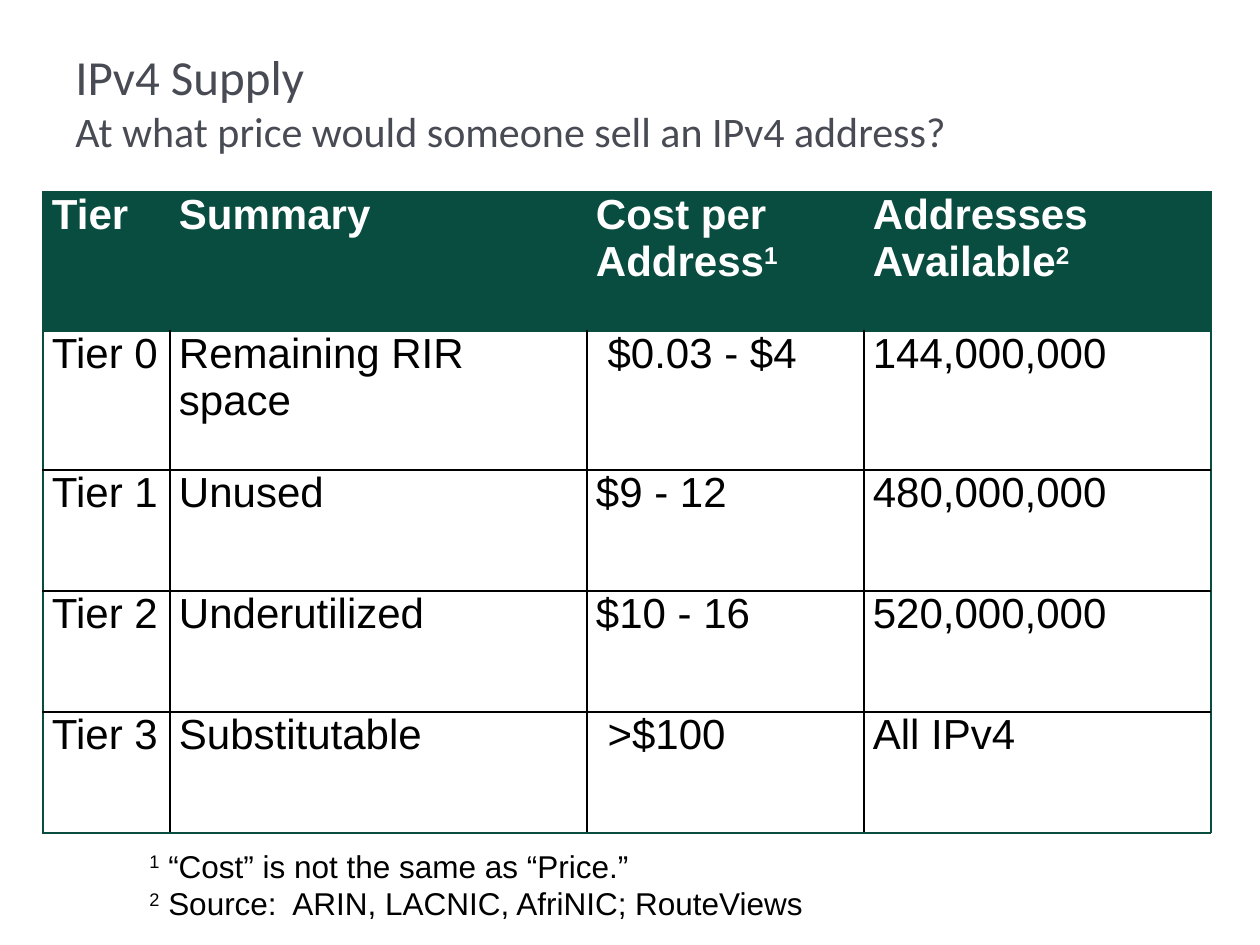
from typing import NamedTuple

from lxml import etree
from pptx import Presentation
from pptx.dml.color import RGBColor
from pptx.enum.text import MSO_ANCHOR
from pptx.oxml.ns import qn
from pptx.util import Emu, Pt

TOP, MIDDLE = MSO_ANCHOR.TOP, MSO_ANCHOR.MIDDLE
EMU_PER_PX = 914400 / 126
COLORS = {"title": "484B54", "green": "094D40", "white": "FFFFFF", "black": "000000"}
SUPERSCRIPT = "30000"


class Style(NamedTuple):
    font: str
    size: int
    color: str
    bold: bool = False


class Box(NamedTuple):
    left: int
    top: int
    width: int
    height: int


class Marked(NamedTuple):
    """Text with an optional footnote mark before or after it."""
    text: str
    before: str = ""
    after: str = ""


class Border(NamedTuple):
    color: str
    points: float


HEADING = Style("Calibri", 28, "title")
QUESTION = Style("Calibri", 24, "title")
HEADER = Style("Arial", 24, "white", True)
BODY = Style("Arial", 24, "black")
NOTE = Style("Arial", 18, "black")
OUTER = Border("green", 0.75)
INNER = Border("black", 1)

COLUMN_WIDTHS = (127, 417, 277, 347)
ROW_HEIGHTS = (139, 139, 121, 121, 121)
TIERS = (
    (Marked("Tier"), Marked("Summary"), Marked("Cost per Address", after="1"),
     Marked("Addresses Available", after="2")),
    (Marked("Tier 0"), Marked("Remaining RIR space"), Marked(" $0.03 - $4"),
     Marked("144,000,000")),
    (Marked("Tier 1"), Marked("Unused"), Marked("$9 - 12"), Marked("480,000,000")),
    (Marked("Tier 2"), Marked("Underutilized"), Marked("$10 - 16"), Marked("520,000,000")),
    (Marked("Tier 3"), Marked("Substitutable"), Marked(" >$100"), Marked("All IPv4")),
)
FOOTNOTES = (
    Marked(" “Cost” is not the same as “Price.”", before="1"),
    Marked(" Source:  ARIN, LACNIC, AfriNIC; RouteViews", before="2"),
)


def px(length: int) -> Emu:
    return Emu(round(length * EMU_PER_PX))


def rgb(name: str) -> RGBColor:
    return RGBColor.from_string(COLORS[name])


def add_run(paragraph, text: str, style: Style, raised: bool = False) -> None:
    run = paragraph.add_run()
    run.text = text
    run.font.name, run.font.size, run.font.bold = style.font, Pt(style.size), style.bold
    run.font.color.rgb = rgb(style.color)
    if raised:
        run.font._element.set("baseline", SUPERSCRIPT)


def add_marked(paragraph, marked: Marked, style: Style) -> None:
    if marked.before:
        add_run(paragraph, marked.before, style, raised=True)
    add_run(paragraph, marked.text, style)
    if marked.after:
        add_run(paragraph, marked.after, style, raised=True)


def add_text_frame(slide, box: Box, anchor):
    frame = slide.shapes.add_textbox(*map(px, box)).text_frame
    frame.word_wrap = True
    frame.vertical_anchor = anchor
    return frame


def cell_borders(row: int, column: int) -> dict[str, Border | None]:
    """Green around the table and under the header, black between body cells."""
    last_row, last_column = len(ROW_HEIGHTS) - 1, len(COLUMN_WIDTHS) - 1
    between_columns = INNER if row else None
    return {
        "a:lnL": between_columns if column else OUTER,
        "a:lnR": between_columns if column < last_column else OUTER,
        "a:lnT": OUTER if row < 2 else INNER,
        "a:lnB": OUTER if row in (0, last_row) else INNER,
    }


def draw_borders(cell, borders: dict[str, Border | None]) -> None:
    properties = cell._tc.get_or_add_tcPr()
    for position, (tag, border) in enumerate(borders.items()):
        line = etree.Element(qn(tag))
        if border:
            line.set("w", str(Pt(border.points)))
            fill = etree.SubElement(line, qn("a:solidFill"))
            etree.SubElement(fill, qn("a:srgbClr"), val=COLORS[border.color])
        else:
            etree.SubElement(line, qn("a:noFill"))
        properties.insert(position, line)


def add_title(slide) -> None:
    paragraph = add_text_frame(slide, Box(63, 40, 1041, 157), TOP).paragraphs[0]
    add_run(paragraph, "IPv4 Supply", HEADING)
    paragraph.add_line_break()
    add_run(paragraph, "At what price would someone sell an IPv4 address?", QUESTION)


def add_tier_table(slide) -> None:
    box = Box(43, 192, sum(COLUMN_WIDTHS), sum(ROW_HEIGHTS))
    table = slide.shapes.add_table(len(TIERS), len(COLUMN_WIDTHS), *map(px, box)).table
    table.horz_banding = False
    for column, width in zip(table.columns, COLUMN_WIDTHS):
        column.width = px(width)
    for row, height in zip(table.rows, ROW_HEIGHTS):
        row.height = px(height)
    for row, tier in enumerate(TIERS):
        for column, marked in enumerate(tier):
            cell = table.cell(row, column)
            cell.margin_left = cell.margin_right = px(9)
            cell.margin_top = cell.margin_bottom = 0
            cell.fill.solid()
            cell.fill.fore_color.rgb = rgb("white" if row else "green")
            add_marked(cell.text_frame.paragraphs[0], marked, BODY if row else HEADER)
            draw_borders(cell, cell_borders(row, column))


def add_footnotes(slide) -> None:
    frame = add_text_frame(slide, Box(137, 840, 920, 89), MIDDLE)
    for index, footnote in enumerate(FOOTNOTES):
        paragraph = frame.add_paragraph() if index else frame.paragraphs[0]
        add_marked(paragraph, footnote, NOTE)


def main() -> None:
    presentation = Presentation()
    presentation.slide_width, presentation.slide_height = px(1260), px(945)
    slide = presentation.slides.add_slide(presentation.slide_layouts[6])
    add_title(slide)
    add_tier_table(slide)
    add_footnotes(slide)
    presentation.save("out.pptx")


if __name__ == "__main__":
    main()
